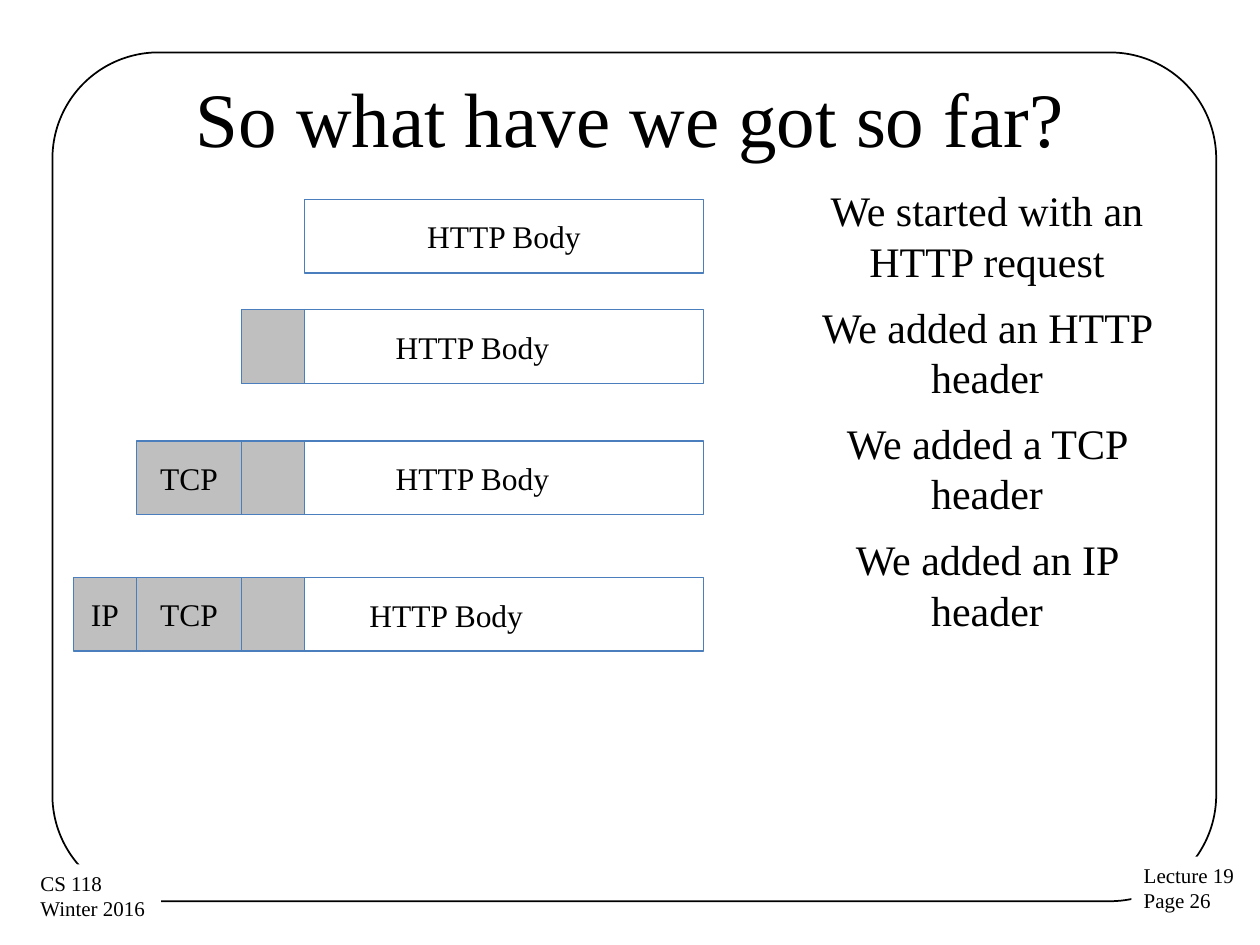
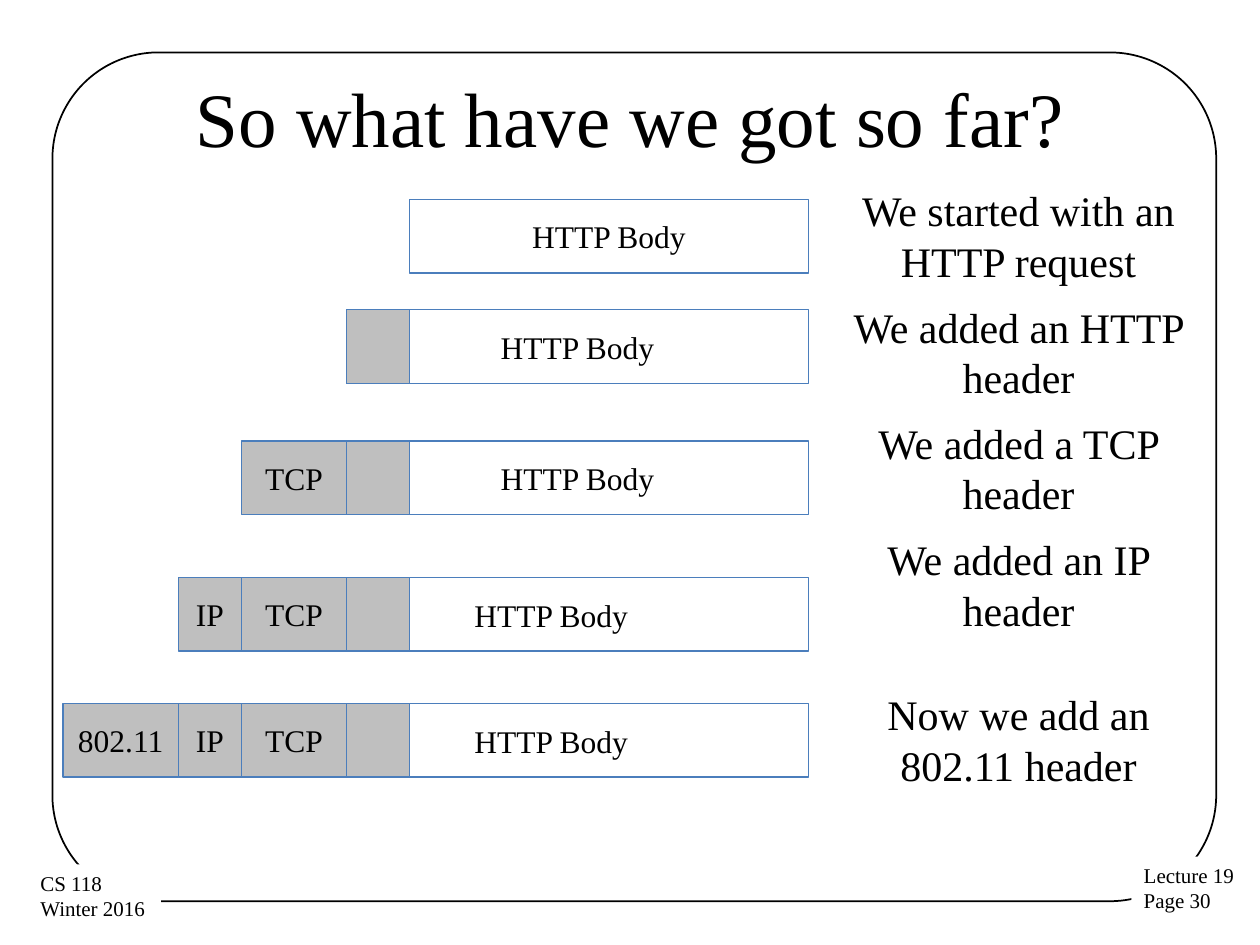
import pptx
import pptx.dml.color
import pptx.enum.shapes
import pptx.enum.text
import pptx.util

Pt = pptx.util.Pt
RGBColor = pptx.dml.color.RGBColor
Align = pptx.enum.text.PP_ALIGN
Anchor = pptx.enum.text.MSO_ANCHOR
AutoSize = pptx.enum.text.MSO_AUTO_SIZE
Preset = pptx.enum.shapes.MSO_SHAPE

BLACK = RGBColor(0x00, 0x00, 0x00)
WHITE = RGBColor(0xFF, 0xFF, 0xFF)
HEADER_GREY = RGBColor(0xBF, 0xBF, 0xBF)
OUTLINE_BLUE = RGBColor(0x4B, 0x7E, 0xBC)
FONT = "Times New Roman"

TITLE = "So what have we got so far?"
BODY_LABEL = "HTTP Body"
BODY_WIDTH = 228
ROW_HEIGHT = 42
LABEL_OFFSET = 198
NOTE_WIDTH, NOTE_HEIGHT = 228, 65.5

# Headers from the body outwards: label and width.
HEADERS = [("", 36), ("TCP", 60), ("IP", 36), ("802.11", 66)]

# Each step: row top, note top, number of headers, headers lying on the
# white box, note.
STEPS = [
    (114, 102, 0, 0, "We started with an HTTP request"),
    (177, 168.5, 1, 1, "We added an HTTP header"),
    (252, 235, 2, 1, "We added a TCP header"),
    (330, 301.5, 3, 2, "We added an IP header"),
    (402, 390, 4, 2, "Now we add an 802.11 header"),
]


class Deck:
    def __init__(self):
        self.presentation = pptx.Presentation()
        self.presentation.slide_width = Pt(720)
        self.presentation.slide_height = Pt(540)
        self.slide = None

    def fill_text(self, shape, lines, size, align=Align.CENTER, anchor=Anchor.MIDDLE, wrap=True):
        frame = shape.text_frame
        frame.word_wrap = wrap
        frame.vertical_anchor = anchor
        for index, line in enumerate(lines):
            paragraph = frame.add_paragraph() if index else frame.paragraphs[0]
            paragraph.alignment = align
            run = paragraph.add_run()
            run.text = line
            run.font.name = FONT
            run.font.size = Pt(size)
            run.font.color.rgb = BLACK

    def box(self, shapes, bounds, fill=None, line=None, weight=0.75, preset=Preset.RECTANGLE):
        shape = shapes.add_shape(preset, *map(Pt, bounds))
        shape.shadow.inherit = False
        if fill is None:
            shape.fill.background()
        else:
            shape.fill.solid()
            shape.fill.fore_color.rgb = fill
        if line is None:
            shape.line.fill.background()
        else:
            shape.line.color.rgb = line
            shape.line.width = Pt(weight)
        return shape

    def text(self, shapes, bounds, words, size, align=Align.CENTER, wrap=True):
        text_box = shapes.add_textbox(*map(Pt, bounds))
        self.fill_text(text_box, [words], size, align, Anchor.TOP, wrap)
        text_box.text_frame.auto_size = AutoSize.SHAPE_TO_FIT_TEXT

    def footer(self, bounds, lines):
        shape = self.box(self.slide.shapes, bounds, WHITE)
        self.fill_text(shape, lines, 12, Align.LEFT, Anchor.TOP, wrap=False)
        shape.text_frame.auto_size = AutoSize.SHAPE_TO_FIT_TEXT

    def start_slide(self, page):
        """Add a slide with its frame, footers and title."""
        self.slide = self.presentation.slides.add_slide(self.presentation.slide_layouts[5])
        frame = self.box(self.slide.shapes, (30, 30, 665, 485), None, BLACK, 1,
                         Preset.ROUNDED_RECTANGLE)
        frame.adjustments[0] = 0.125
        self.footer((646.5, 489.5, 67, 36.5), ["Lecture 19", f"Page {page}"])
        self.footer((16, 494, 76, 36.5), ["CS 118", "Winter 2016"])
        title = self.slide.shapes.title
        title.left, title.top, title.width, title.height = map(Pt, (36, 21.6, 648, 90))
        self.fill_text(title, [TITLE], 44)

    def packet(self, right, top, header_count, covered):
        """Draw a packet growing leftwards from its right edge."""
        shapes = self.slide.shapes
        if header_count:
            shapes = shapes.add_group_shape().shapes
        width = BODY_WIDTH + sum(size for _, size in HEADERS[:covered])
        body = self.box(shapes, (right - width, top, width, ROW_HEIGHT), WHITE, OUTLINE_BLUE)
        left = right - BODY_WIDTH
        for label, size in HEADERS[:header_count]:
            left -= size
            header = self.box(shapes, (left, top, size, ROW_HEIGHT), HEADER_GREY, OUTLINE_BLUE)
            if label:
                # Narrow cells need the full width for their label.
                header.text_frame.margin_left = header.text_frame.margin_right = 0
                self.fill_text(header, [label], 18)
        if covered > 1:
            self.text(shapes, (right - LABEL_OFFSET, top + 7, 104.5, 29), BODY_LABEL, 18,
                      Align.LEFT, wrap=False)
        else:
            self.fill_text(body, [BODY_LABEL], 18)

    def steps(self, count, packet_right, note_left):
        for top, note_top, header_count, covered, note in STEPS[:count]:
            self.packet(packet_right, top, header_count, covered)
            self.text(self.slide.shapes, (note_left, note_top, NOTE_WIDTH, NOTE_HEIGHT), note, 24)


def main():
    deck = Deck()
    for page, count, packet_right, note_left in [(26, 4, 402, 450), (30, 5, 462, 468)]:
        deck.start_slide(page)
        deck.steps(count, packet_right, note_left)
    deck.presentation.save("out.pptx")


if __name__ == "__main__":
    main()
